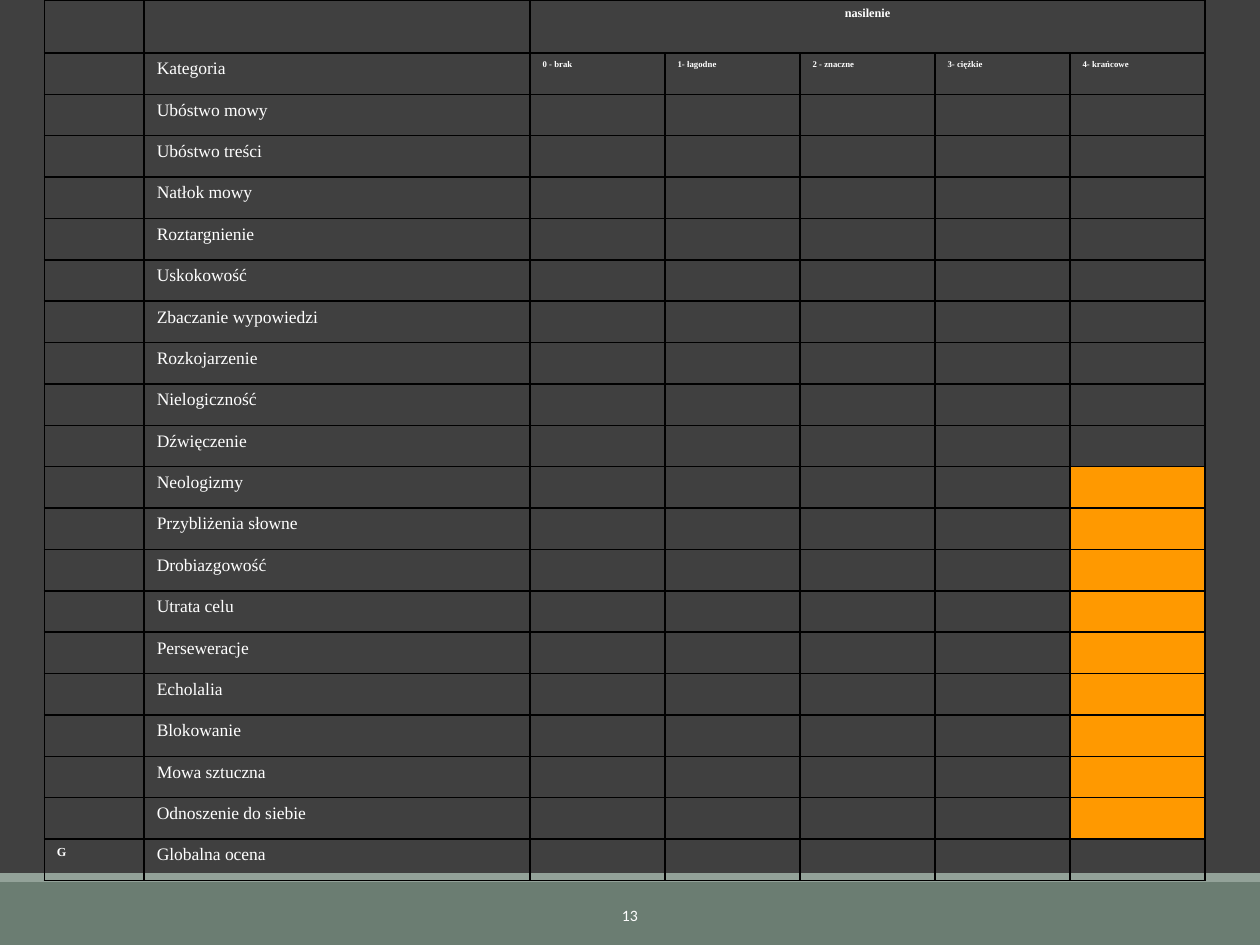
from lxml.etree import SubElement as Sub
from pptx import Presentation
from pptx.dml.color import RGBColor as Rgb
from pptx.enum.shapes import MSO_SHAPE as Kind
from pptx.enum.text import MSO_ANCHOR as Anchor, PP_ALIGN as Align
from pptx.oxml.ns import qn
from pptx.util import Pt

HUES = {"back": "404040", "foot": "6B7D72", "strip": "93A299",
        "mark": "FF9900", "text": "FFFFFF", "line": "000000"}
SERIF = "Times New Roman"
HEAD = {"name": SERIF, "size": Pt(7), "bold": True}
LEVEL = {"name": SERIF, "size": Pt(5), "bold": True}
ITEM = {"name": SERIF, "size": Pt(10), "bold": False}
PAGE = {"name": "Calibri", "size": Pt(9), "bold": False}

LEVELS = ["0 - brak", "1- łagodne", "2 - znaczne", "3- ciężkie", "4- krańcowe"]
ITEMS = ["Kategoria", "Ubóstwo mowy", "Ubóstwo treści", "Natłok mowy",
         "Roztargnienie", "Uskokowość", "Zbaczanie wypowiedzi", "Rozkojarzenie",
         "Nielogiczność", "Dźwięczenie", "Neologizmy", "Przybliżenia słowne",
         "Drobiazgowość", "Utrata celu", "Perseweracje", "Echolalia",
         "Blokowanie", "Mowa sztuczna", "Odnoszenie do siebie", "Globalna ocena"]
WIDTHS = [57.1, 220.5] + [77.15] * 5
TOP, STEP = 30.3, 23.65
INDENT = Pt(27)


def paint(fill, hue):
    fill.solid()
    fill.fore_color.rgb = Rgb.from_string(HUES[hue])


def write(para, text, style, align=Align.LEFT):
    para.alignment = align
    run = para.add_run()
    run.text = text
    for key, value in style.items():
        setattr(run.font, key, value)
    run.font.color.rgb = Rgb.from_string(HUES["text"])


def add_band(slide, top, height, hue):
    band = slide.shapes.add_shape(Kind.RECTANGLE, 0, Pt(top), Pt(720), Pt(height))
    band.shadow.inherit = False
    paint(band.fill, hue)
    band.line.fill.background()


def add_page(slide, text):
    box = slide.shapes.add_textbox(Pt(217.5), Pt(508.5), Pt(285), Pt(28.8))
    frame = box.text_frame
    frame.word_wrap = True
    frame.vertical_anchor = Anchor.MIDDLE
    write(frame.paragraphs[0], text, PAGE, Align.CENTER)


def edge(cell):
    props = cell._tc.get_or_add_tcPr()
    for side in ("lnL", "lnR", "lnT", "lnB"):
        line = Sub(props, qn(f"a:{side}"), w=str(Pt(1)))
        solid = Sub(line, qn("a:solidFill"))
        Sub(solid, qn("a:srgbClr"), val=HUES["line"])


def label(cell, text, style, align=Align.LEFT):
    para = cell.text_frame.paragraphs[0]
    props = para._p.get_or_add_pPr()
    props.set("marL", str(INDENT))
    props.set("indent", str(-INDENT))
    write(para, text, style, align)


def add_grid(slide):
    rows = len(ITEMS) + 1
    frame = slide.shapes.add_table(rows, len(WIDTHS), Pt(25.3), 0,
                                   Pt(sum(WIDTHS)), Pt(TOP + STEP * len(ITEMS)))
    grid = frame.table
    grid.first_row = grid.horz_banding = False
    for col, width in zip(grid.columns, WIDTHS):
        col.width = Pt(width)
    for num, row in enumerate(grid.rows):
        row.height = Pt(STEP if num else TOP)
    for cell in grid.iter_cells():
        edge(cell)
        cell.fill.background()

    grid.cell(0, 2).merge(grid.cell(0, 6))
    label(grid.cell(0, 2), "nasilenie", HEAD, Align.CENTER)
    for col, text in enumerate(LEVELS, 2):
        label(grid.cell(1, col), text, LEVEL)
    for row, text in enumerate(ITEMS, 1):
        label(grid.cell(row, 1), text, ITEM)
    label(grid.cell(rows - 1, 0), "G", HEAD)

    first = ITEMS.index("Neologizmy") + 1
    for row in range(first, rows - 1):
        paint(grid.cell(row, 6).fill, "mark")
    for cell in grid.iter_cells():
        if not cell.text:
            Sub(cell.text_frame.paragraphs[0]._p, qn("a:endParaRPr"), sz="700")


def main():
    deck = Presentation()
    deck.slide_width, deck.slide_height = Pt(720), Pt(540)
    slide = deck.slides.add_slide(deck.slide_layouts[6])
    paint(slide.background.fill, "back")
    add_band(slide, 504, 36, "foot")
    add_band(slide, 499, 5, "strip")
    add_page(slide, "13")
    add_grid(slide)
    deck.save("out.pptx")


if __name__ == "__main__":
    main()
